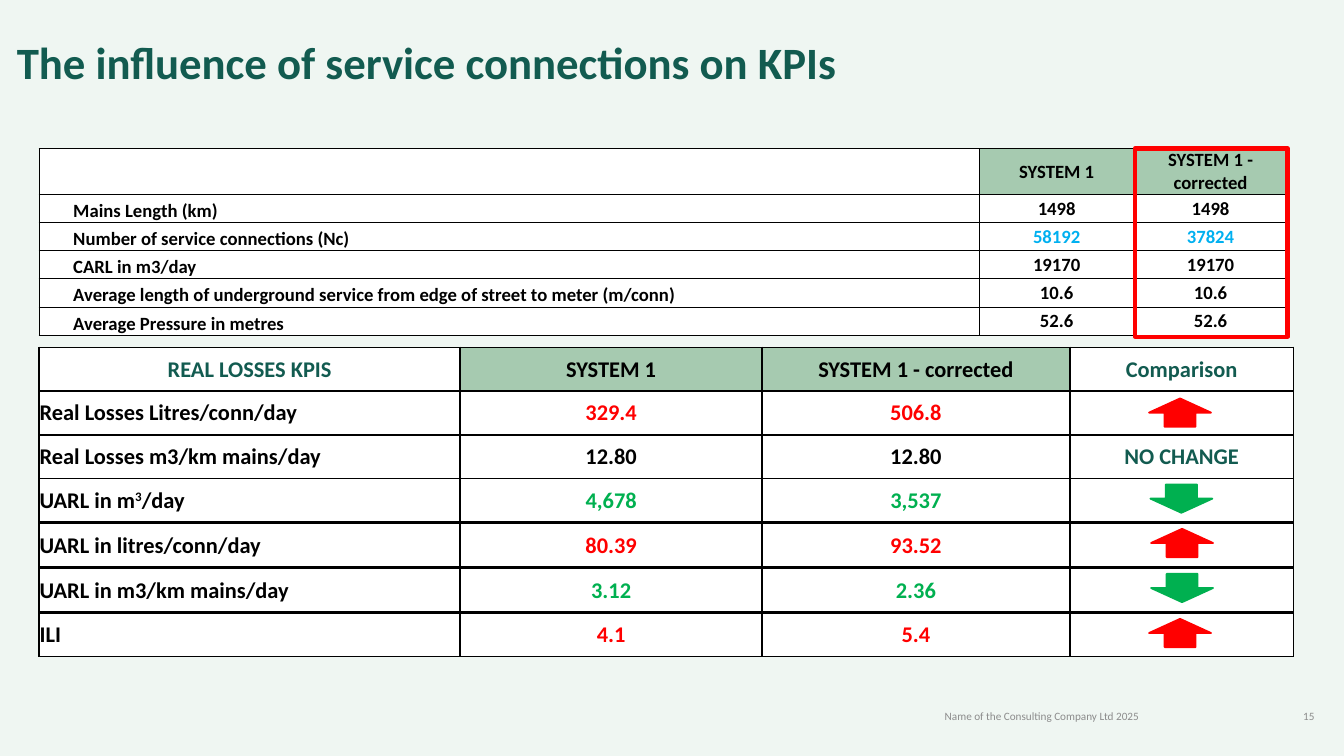
"""Build the slide on how service connections influence water loss KPIs."""
from dataclasses import dataclass
from typing import Optional

import lxml.etree
import pptx
import pptx.dml.color
import pptx.enum.shapes
import pptx.enum.text
import pptx.oxml.ns
import pptx.util

PX = 9144
ALIGN = pptx.enum.text.PP_ALIGN
ANCHOR = pptx.enum.text.MSO_ANCHOR
SHAPE = pptx.enum.shapes.MSO_SHAPE


@dataclass(frozen=True)
class Theme:
    font: str = "Calibri"
    background: str = "EFF6F2"
    dark: str = "125B50"
    header: str = "A6CAB0"
    white: str = "FFFFFF"
    black: str = "000000"
    grey: str = "8C8C8C"
    blue: str = "00B0F0"
    red: str = "FF0000"
    green: str = "00B050"
    title_size: int = 48
    input_size: int = 20
    kpi_size: int = 24
    footer_size: int = 12


T = Theme()


@dataclass(frozen=True)
class Cell:
    text: str = ""
    color: str = T.black
    fill: str = T.white
    align: ALIGN = ALIGN.CENTER
    anchor: ANCHOR = ANCHOR.MIDDLE
    indent: int = 0


@dataclass(frozen=True)
class Grid:
    left: int
    top: int
    widths: list[int]
    heights: list[int]
    rows: list[list[Cell]]
    size: int
    border: float


@dataclass(frozen=True)
class Kpi:
    name: str
    before: str
    after: str
    color: str = T.black
    comparison: str = ""


@dataclass(frozen=True)
class Arrow:
    left: int
    top: int
    up: bool


@dataclass(frozen=True)
class Label:
    box: tuple[int, int, int, int]
    text: str
    size: int
    color: str
    align: ALIGN
    bold: bool = False
    margin: Optional[int] = None
    spacing: Optional[float] = None


def rgb(color: str) -> pptx.dml.color.RGBColor:
    return pptx.dml.color.RGBColor.from_string(color)


def px(*lengths: int) -> list[int]:
    return [length * PX for length in lengths]


def write(p, text: str, size: int, color: str, align: ALIGN, bold: bool) -> None:
    p.alignment = align
    p.font.name, p.font.size, p.font.bold = T.font, pptx.util.Pt(size), bold
    p.font.color.rgb = rgb(color)
    for i, part in enumerate(text.split("^")):
        r = p.add_run()
        r.text = part
        if i % 2:
            r._r.get_or_add_rPr().set("baseline", "30000")


def draw_borders(cell, width: float) -> None:
    tcPr = cell._tc.get_or_add_tcPr()
    for i, side in enumerate(("a:lnL", "a:lnR", "a:lnT", "a:lnB")):
        ln = lxml.etree.Element(pptx.oxml.ns.qn(side), w=str(pptx.util.Pt(width)))
        fill = lxml.etree.SubElement(ln, pptx.oxml.ns.qn("a:solidFill"))
        lxml.etree.SubElement(fill, pptx.oxml.ns.qn("a:srgbClr"), val=T.black)
        tcPr.insert(i, ln)


def draw_cell(cell, content: Cell, size: int, border: float) -> None:
    cell.fill.solid()
    cell.fill.fore_color.rgb = rgb(content.fill)
    cell.margin_left, cell.margin_right, cell.margin_top, cell.margin_bottom = px(1, 1, 1, 0)
    cell.vertical_anchor = content.anchor
    draw_borders(cell, border)
    if content.text:
        p = cell.text_frame.paragraphs[0]
        write(p, content.text, size, content.color, content.align, True)
        if content.indent:
            p.level = 1
            pPr = p._p.get_or_add_pPr()
            pPr.set("marL", str(content.indent * PX))
            pPr.set("indent", "0")


def draw_grid(s, grid: Grid) -> None:
    box = px(grid.left, grid.top, sum(grid.widths), sum(grid.heights))
    table = s.shapes.add_table(len(grid.heights), len(grid.widths), *box).table
    table.first_row = table.horz_banding = False
    for column, width in zip(table.columns, grid.widths):
        column.width = width * PX
    for row, height, contents in zip(table.rows, grid.heights, grid.rows):
        row.height = height * PX
        for cell, content in zip(row.cells, contents):
            draw_cell(cell, content, grid.size, grid.border)


def draw_label(s, label: Label) -> None:
    tf = s.shapes.add_textbox(*px(*label.box)).text_frame
    tf.word_wrap = True
    tf.vertical_anchor = ANCHOR.MIDDLE
    if label.margin is not None:
        tf.margin_left = tf.margin_right = tf.margin_top = tf.margin_bottom = label.margin
        tf.vertical_anchor = ANCHOR.TOP
    p = tf.paragraphs[0]
    if label.spacing:
        p.line_spacing = pptx.util.Pt(label.spacing)
    write(p, label.text, label.size, label.color, label.align, label.bold)


def draw_arrow(s, arrow: Arrow) -> None:
    sp = s.shapes.add_shape(SHAPE.DOWN_ARROW, *px(arrow.left, arrow.top, 92, 42))
    sp.shadow.inherit = False
    sp.rotation = 180 if arrow.up else 0
    color = rgb(T.red if arrow.up else T.green)
    sp.fill.solid()
    sp.fill.fore_color.rgb = sp.line.color.rgb = color
    sp.line.width = pptx.util.Pt(2)


def draw_frame(s, *box: int) -> None:
    sp = s.shapes.add_shape(SHAPE.RECTANGLE, *px(*box))
    sp.shadow.inherit = False
    sp.fill.background()
    sp.line.color.rgb = rgb(T.red)
    sp.line.width = pptx.util.Pt(4.5)


def input_row(name: str, before: str, after: str, color: str = T.black) -> list[Cell]:
    return [Cell(name, align=ALIGN.LEFT, anchor=ANCHOR.BOTTOM, indent=50),
            Cell(before, color), Cell(after, color)]


def kpi_row(kpi: Kpi) -> list[Cell]:
    return [Cell(kpi.name, align=ALIGN.LEFT), Cell(kpi.before, kpi.color),
            Cell(kpi.after, kpi.color), Cell(kpi.comparison, T.dark)]


SYSTEMS = [Cell("SYSTEM 1", fill=T.header), Cell("SYSTEM 1 - corrected", fill=T.header)]
INPUTS = [
    [Cell(), *SYSTEMS],
    input_row("Mains Length (km)", "1498", "1498"),
    input_row("Number of service connections (Nc)", "58192", "37824", T.blue),
    input_row("CARL in m3/day", "19170", "19170"),
    input_row("Average length of underground service from edge of street to meter (m/conn)",
              "10.6", "10.6"),
    input_row("Average Pressure in metres", "52.6", "52.6"),
]
KPIS = [[Cell("REAL LOSSES KPIS", T.dark), *SYSTEMS, Cell("Comparison", T.dark)]] + [
    kpi_row(kpi) for kpi in (
        Kpi("Real Losses Litres/conn/day", "329.4", "506.8", T.red),
        Kpi("Real Losses m3/km mains/day", "12.80", "12.80", comparison="NO CHANGE"),
        Kpi("UARL in m^3^/day", "4,678", "3,537", T.green),
        Kpi("UARL in litres/conn/day", "80.39", "93.52", T.red),
        Kpi("UARL in m3/km mains/day", "3.12", "2.36", T.green),
        Kpi("ILI", "4.1", "5.4", T.red),
    )
]
KPI_BLOCKS = [(517, KPIS[:3])] + [(top, [row]) for top, row in zip((712, 779, 846, 912), KPIS[3:])]
ARROWS = [Arrow(1712, 721, False), Arrow(1713, 854, False), Arrow(1710, 921, True),
          Arrow(1713, 787, True), Arrow(1710, 593, True)]
TITLE = Label((25, 39, 1950, 89), "The influence of service connections on KPIs",
              T.title_size, T.dark, ALIGN.LEFT, True, 0, 67.2)
FOOTERS = [
    Label((1392, 1045, 317, 40), "Name of the Consulting Company Ltd 2025",
          T.footer_size, T.grey, ALIGN.CENTER),
    Label((1733, 1045, 233, 40), "15", T.footer_size, T.grey, ALIGN.RIGHT),
]


def main() -> None:
    prs = pptx.Presentation()
    prs.slide_width, prs.slide_height = px(2000, 1125)
    s = prs.slides.add_slide(prs.slide_layouts[6])
    s.background.fill.solid()
    s.background.fill.fore_color.rgb = rgb(T.background)
    draw_label(s, TITLE)
    draw_grid(s, Grid(58, 221, [1400, 229, 229], [68] + [42] * 5, INPUTS, T.input_size, 1))
    draw_frame(s, 1689, 221, 227, 280)
    for top, rows in KPI_BLOCKS:
        draw_grid(s, Grid(58, top, [627, 449, 458, 333], [65] * len(rows), rows, T.kpi_size, 2.25))
    for arrow in ARROWS:
        draw_arrow(s, arrow)
    for footer in FOOTERS:
        draw_label(s, footer)
    prs.save("out.pptx")


if __name__ == "__main__":
    main()
